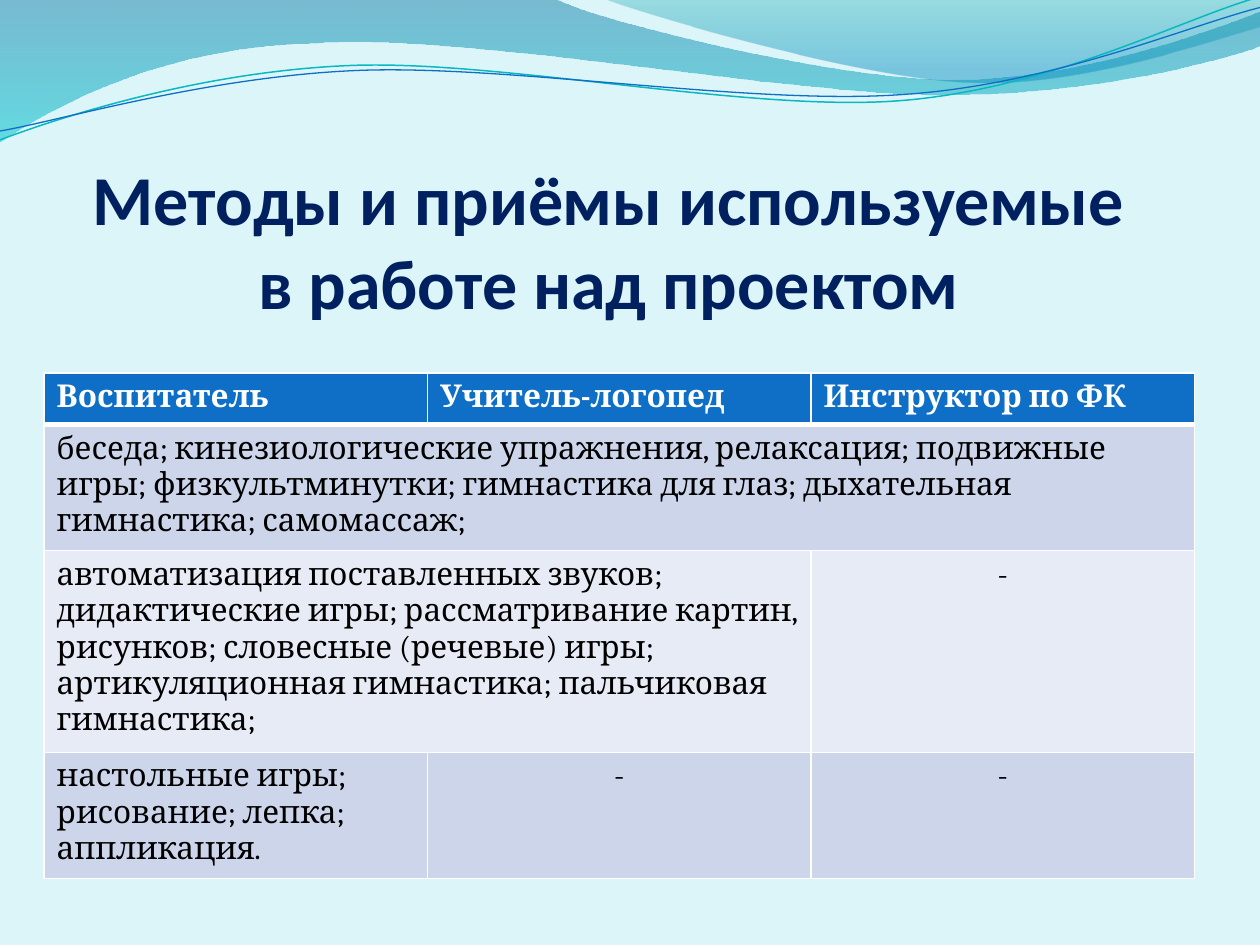
from dataclasses import dataclass
from math import cos, radians, sin
from typing import Optional

from lxml.etree import SubElement
from pptx import Presentation
from pptx.dml.color import RGBColor
from pptx.enum.text import MSO_ANCHOR, PP_ALIGN
from pptx.oxml.ns import qn
from pptx.util import Inches, Pt

COLORS = {
    "bg": "DBF5F9", "navy": "002060", "blue": "0F6FC6", "teal": "0AB8BF",
    "white": "FFFFFF", "black": "000000", "band": "CCD5EA", "light": "E7EBF5",
    "deep": "0074A1", "cyan": "00C6CF", "sea": "00A1A9", "sky": "008BBF",
}
TILT = 2.7


@dataclass
class Stop:
    pos: float
    color: str
    opacity: int


@dataclass
class Wave:
    start: tuple
    segments: list
    stops: tuple = ()
    line: Optional[str] = None
    width: float = 0
    center: Optional[tuple] = None


@dataclass
class Cell:
    row: int
    col: int
    text: str
    span: int = 1


WAVES = [
    Wave((0, 0), [
        (4.4, -0.01),
        (4.76, 0.17, 6.64, 0.63, 7.58, 0.63), (8.53, 0.63, 9.58, 0.26, 10, 0.09),
        (10.01, 0.36),
        (9.83, 0.44, 8.7, 0.76, 7.46, 0.75), (6.22, 0.75, 3.82, 0.28, 2.57, 0.34),
        (1.29, 0.36, 0.46, 0.83, -0.01, 1.13),
    ], stops=(Stop(0, "deep", 45), Stop(1, "cyan", 55))),
    Wave((4.79, -0.01), [
        (5.09, 0.11, 6.82, 0.62, 7.69, 0.65), (8.56, 0.69, 9.61, 0.32, 10, 0.21),
        (10, 0),
    ], stops=(Stop(0, "sea", 30), Stop(0.8, "sky", 45))),
    Wave((0, 1.11), [
        (0.48, 0.93, 1.58, 0.57, 2.77, 0.52), (3.95, 0.47, 5.93, 0.89, 7.13, 0.8),
        (8.33, 0.71, 9.38, 0.15, 9.98, -0.02),
    ], line="teal", width=0.85, center=(4.99, 0.57)),
    Wave((0, 1.04), [
        (0.47, 0.96, 1.64, 0.61, 2.83, 0.56), (4.03, 0.51, 5.97, 0.84, 7.17, 0.75),
        (8.36, 0.67, 9.41, 0.21, 10, 0.06),
    ], line="blue", width=0.75, center=(5, 0.59)),
]

CELLS = [
    Cell(0, 0, "Воспитатель"),
    Cell(0, 1, "Учитель-логопед"),
    Cell(0, 2, "Инструктор по ФК"),
    Cell(1, 0, "беседа; кинезиологические упражнения, релаксация; подвижные игры; "
               "физкультминутки; гимнастика для глаз; дыхательная гимнастика; "
               "самомассаж;", span=3),
    Cell(2, 0, "автоматизация поставленных звуков; дидактические игры; "
               "рассматривание картин, рисунков; словесные (речевые) игры; "
               "артикуляционная гимнастика; пальчиковая гимнастика;", span=2),
    Cell(2, 2, "-"),
    Cell(3, 0, "настольные игры; рисование; лепка; аппликация."),
    Cell(3, 1, "-"),
    Cell(3, 2, "-"),
]
ROW_FILLS = ["blue", "band", "light", "band"]


def rgb(name: str) -> RGBColor:
    return RGBColor.from_string(COLORS[name])


def put_text(tf, text: str, *, font: str, size: float, color: str,
             bold: bool = False, align=PP_ALIGN.LEFT) -> None:
    p = tf.paragraphs[0]
    p.alignment = align
    r = p.add_run()
    r.text = text
    r.font.name = font
    r.font.size = Pt(size)
    r.font.bold = bold
    r.font.color.rgb = rgb(color)


def rotate(point: tuple, center: tuple, degrees: float) -> tuple:
    a = radians(degrees)
    dx, dy = point[0] - center[0], point[1] - center[1]
    return (center[0] + dx * cos(a) - dy * sin(a),
            center[1] + dx * sin(a) + dy * cos(a))


def bend(sp, segments: list) -> None:
    lines = iter(list(sp.element.spPr.iter(qn("a:lnTo"))))
    for seg in segments:
        first = next(lines)
        if len(seg) == 2:
            continue
        first.tag
        curve = SubElement(first.getparent(), qn("a:cubicBezTo"))
        first.addprevious(curve)
        for ln in (first, next(lines), next(lines)):
            curve.append(ln[0])
            ln.getparent().remove(ln)


def draw_wave(s, wave: Wave) -> None:
    points = [wave.start] + [seg[i:i + 2] for seg in wave.segments
                             for i in range(0, len(seg), 2)]
    if wave.center:
        points = [rotate(pt, wave.center, TILT) for pt in points]
    points = [(Inches(x), Inches(y)) for x, y in points]
    builder = s.shapes.build_freeform(*points[0])
    builder.add_line_segments(points[1:], close=bool(wave.stops))
    sp = builder.convert_to_shape()
    bend(sp, wave.segments)
    sp.shadow.inherit = False
    if wave.line:
        sp.rotation = 360 - TILT
        sp.fill.background()
        sp.line.color.rgb = rgb(wave.line)
        sp.line.width = Pt(wave.width)
        return
    sp.line.fill.background()
    sp.fill.gradient()
    sp.fill.gradient_angle = 270
    for target, stop in zip(sp.fill.gradient_stops, wave.stops):
        target.position = stop.pos
        target.color.rgb = rgb(stop.color)
    for clr, stop in zip(sp.element.spPr.iter(qn("a:srgbClr")), wave.stops):
        SubElement(clr, qn("a:alpha"), val=str(stop.opacity * 1000))


def set_borders(cell, **widths: float) -> None:
    tc_pr = cell._tc.get_or_add_tcPr()
    for side in "LRTB":
        ln = SubElement(tc_pr, qn(f"a:ln{side}"), w=str(Pt(widths.get(side, 1))))
        fill = SubElement(ln, qn("a:solidFill"))
        SubElement(fill, qn("a:srgbClr"), val=COLORS["white"])


def draw_title(s) -> None:
    sp = s.shapes.add_textbox(Inches(0.58), Inches(1), Inches(8.5), Inches(1.57))
    tf = sp.text_frame
    tf.word_wrap = True
    tf.vertical_anchor = MSO_ANCHOR.BOTTOM
    tf.margin_left = tf.margin_right = tf.margin_top = tf.margin_bottom = 0
    put_text(tf, "Методы и приёмы используемые в работе над проектом",
             font="Calibri", size=40, color="navy", bold=True, align=PP_ALIGN.CENTER)


def draw_table(s) -> None:
    height = Inches(3.88)
    frame = s.shapes.add_table(len(ROW_FILLS), 3, Inches(0.35), Inches(2.96),
                               Inches(9.13), height)
    table = frame.table
    for row in table.rows:
        row.height = Inches(0.41)
    frame.height = height
    for i, fill in enumerate(ROW_FILLS):
        for cell in table.rows[i].cells:
            set_borders(cell, T=3 if i == 1 else 1, B=3 if i == 0 else 1)
            cell.fill.solid()
            cell.fill.fore_color.rgb = rgb(fill)
    for item in CELLS:
        cell = table.cell(item.row, item.col)
        if item.span > 1:
            cell.merge(table.cell(item.row, item.col + item.span - 1))
        header = item.row == 0
        put_text(cell.text_frame, item.text, font="Cambria", size=18, bold=header,
                 color="white" if header else "black",
                 align=PP_ALIGN.CENTER if item.text == "-" else PP_ALIGN.LEFT)


def main() -> None:
    prs = Presentation()
    prs.slide_width, prs.slide_height = Inches(10), Inches(7.5)
    s = prs.slides.add_slide(prs.slide_layouts[6])
    s.background.fill.solid()
    s.background.fill.fore_color.rgb = rgb("bg")
    for wave in WAVES:
        draw_wave(s, wave)
    draw_title(s)
    draw_table(s)
    prs.save("out.pptx")


if __name__ == "__main__":
    main()
